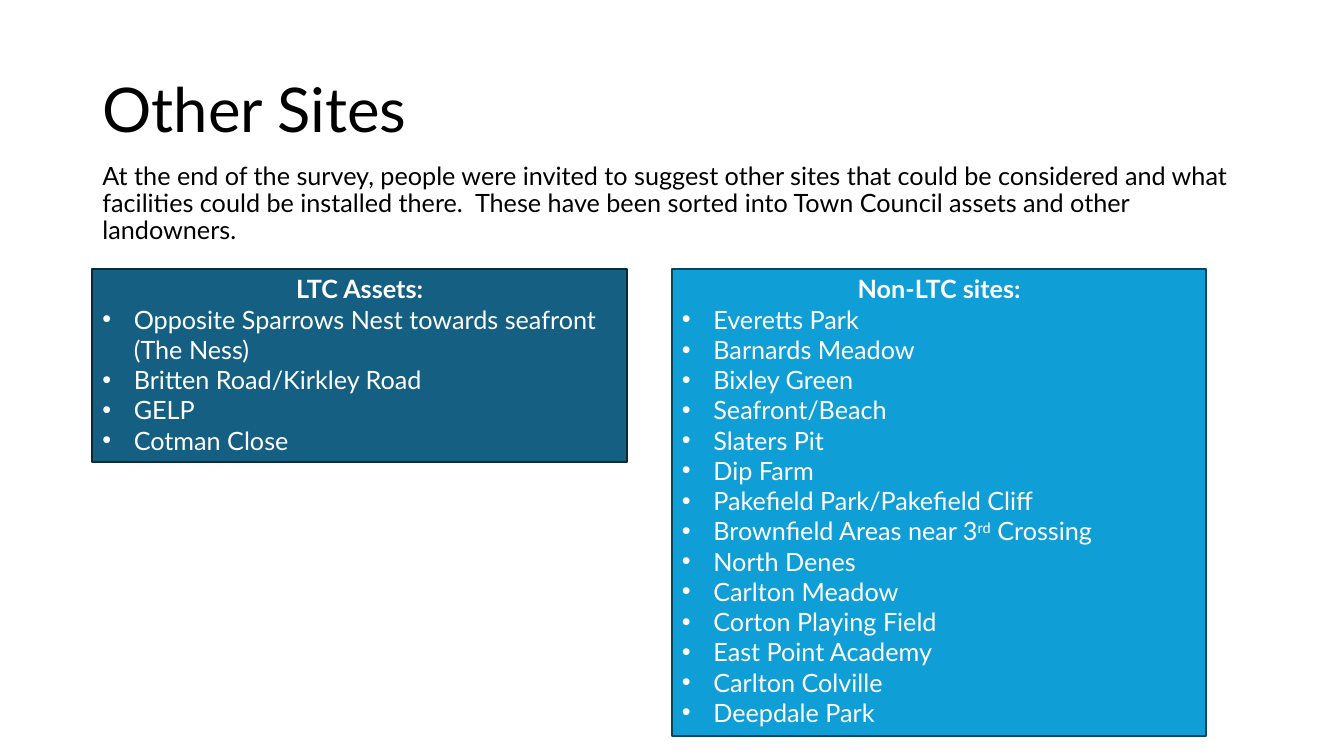
from dataclasses import dataclass

import pptx
import pptx.dml.color
import pptx.enum.shapes
import pptx.enum.text
import pptx.oxml
import pptx.oxml.ns
import pptx.util

PX = 9525  # EMU per px, 96 px to the inch
FONT = "Lato"
BULLET_INDENT = 30
SUPERSCRIPT_MARK = "^"  # encloses superscript text in an item
COLORS = {
    "text": "000000",
    "box_text": "FFFFFF",
    "ltc_fill": "156082",
    "ltc_line": "092A39",
    "other_fill": "0F9ED5",
    "other_line": "07455D",
}


@dataclass(frozen=True)
class SiteBox:
    left: int
    height: int
    fill: str
    line: str
    heading: str
    sites: tuple[str, ...]
    top: int = 256
    width: int = 509


SITE_BOXES = (
    SiteBox(88, 184, "ltc_fill", "ltc_line", "LTC Assets:", (
        "Opposite Sparrows Nest towards seafront (The Ness)",
        "Britten Road/Kirkley Road",
        "GELP",
        "Cotman Close",
    )),
    SiteBox(640, 445, "other_fill", "other_line", "Non-LTC sites:", (
        "Everetts Park",
        "Barnards Meadow",
        "Bixley Green",
        "Seafront/Beach",
        "Slaters Pit",
        "Dip Farm",
        "Pakefield Park/Pakefield Cliff",
        "Brownfield Areas near 3^rd^ Crossing",
        "North Denes",
        "Carlton Meadow",
        "Corton Playing Field",
        "East Point Academy",
        "Carlton Colville",
        "Deepdale Park",
    )),
)


def px(length: int) -> int:
    return pptx.util.Emu(length * PX)


def rgb(name: str) -> pptx.dml.color.RGBColor:
    return pptx.dml.color.RGBColor.from_string(COLORS[name])


def format_runs(paragraph, size: int, color: str, bold: bool = False) -> None:
    for run in paragraph.runs:
        run.font.name = FONT
        run.font.size = pptx.util.Pt(size)
        run.font.bold = bold
        run.font.color.rgb = rgb(color)


def set_bullet(paragraph, character: str = "", indent: int = 0) -> None:
    """Give a hanging bullet, or none when no character is passed."""
    properties = paragraph._p.get_or_add_pPr()
    properties.set("marL", str(px(indent)))
    properties.set("indent", str(-px(indent)))
    if character:
        font = pptx.oxml.ns.qn("a:buFont")
        properties.append(properties.makeelement(font, {"typeface": "Arial"}))
    tag = pptx.oxml.ns.qn("a:buChar" if character else "a:buNone")
    attributes = {"char": character} if character else {}
    properties.append(properties.makeelement(tag, attributes))


def fill_placeholder(placeholder, bounds: tuple[int, int, int, int], text: str,
                     size: int, space_before: int,
                     anchor: pptx.enum.text.MSO_ANCHOR) -> None:
    placeholder.left, placeholder.top, placeholder.width, placeholder.height = map(px, bounds)
    text_frame = placeholder.text_frame
    text_frame.text = text
    text_frame.word_wrap = True
    text_frame.auto_size = pptx.enum.text.MSO_AUTO_SIZE.NONE
    text_frame.vertical_anchor = anchor
    paragraph = text_frame.paragraphs[0]
    paragraph.alignment = pptx.enum.text.PP_ALIGN.LEFT
    paragraph.line_spacing = 0.9
    paragraph.space_before = pptx.util.Pt(space_before)
    set_bullet(paragraph)
    format_runs(paragraph, size, "text")


def add_site(text_frame, site: str) -> None:
    paragraph = text_frame.add_paragraph()
    paragraph.alignment = pptx.enum.text.PP_ALIGN.LEFT
    set_bullet(paragraph, "•", BULLET_INDENT)
    for index, part in enumerate(site.split(SUPERSCRIPT_MARK)):
        run = paragraph.add_run()
        run.text = part
        if index % 2:
            run._r.get_or_add_rPr().set("baseline", "30000")
    format_runs(paragraph, 18, "box_text")


def add_site_box(slide, box: SiteBox) -> None:
    shape = slide.shapes.add_shape(
        pptx.enum.shapes.MSO_SHAPE.RECTANGLE,
        px(box.left), px(box.top), px(box.width), px(box.height))
    shape.shadow.inherit = False
    shape.fill.solid()
    shape.fill.fore_color.rgb = rgb(box.fill)
    shape.line.color.rgb = rgb(box.line)
    shape.line.width = pptx.util.Pt(1.5)

    text_frame = shape.text_frame
    text_frame.text = box.heading
    text_frame.word_wrap = True
    text_frame.auto_size = pptx.enum.text.MSO_AUTO_SIZE.SHAPE_TO_FIT_TEXT
    text_frame.vertical_anchor = pptx.enum.text.MSO_ANCHOR.TOP
    heading = text_frame.paragraphs[0]
    heading.alignment = pptx.enum.text.PP_ALIGN.CENTER
    format_runs(heading, 18, "box_text", bold=True)
    for site in box.sites:
        add_site(text_frame, site)


def main() -> None:
    presentation = pptx.Presentation()
    presentation.slide_width = px(1280)
    presentation.slide_height = px(720)
    slide = presentation.slides.add_slide(presentation.slide_layouts[1])

    # Title and introduction
    fill_placeholder(slide.shapes.title, (88, 38, 1104, 139), "Other Sites",
                     44, 0, pptx.enum.text.MSO_ANCHOR.MIDDLE)
    fill_placeholder(
        slide.placeholders[1], (88, 151, 1104, 117),
        "At the end of the survey, people were invited to suggest other sites "
        "that could be considered and what facilities could be installed there.  "
        "These have been sorted into Town Council assets and other landowners.",
        18, 10, pptx.enum.text.MSO_ANCHOR.TOP)

    # Suggested sites by landowner
    for box in SITE_BOXES:
        add_site_box(slide, box)

    presentation.save("out.pptx")


if __name__ == "__main__":
    main()
